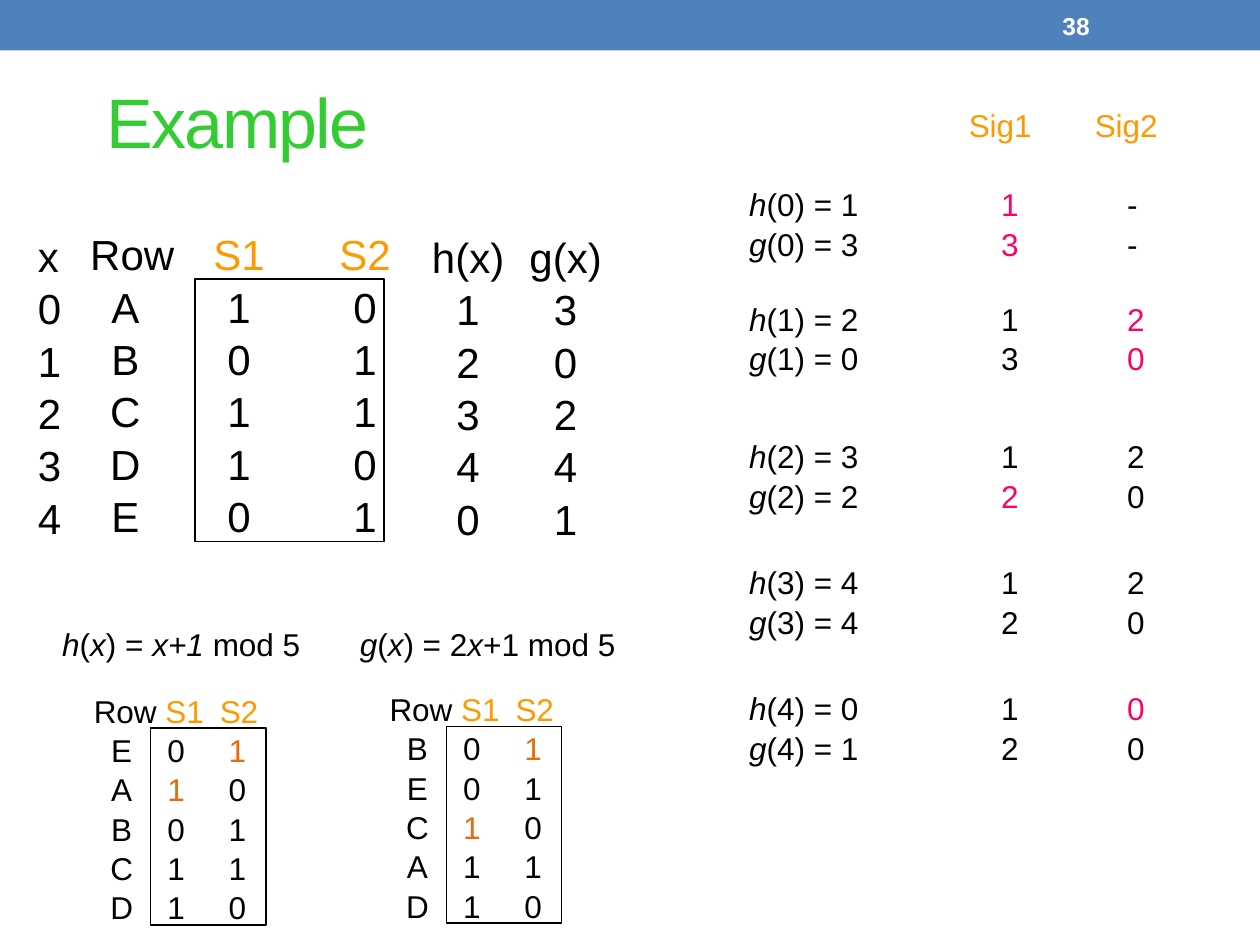
import pptx
import pptx.dml.color
import pptx.enum.shapes
import pptx.enum.text
import pptx.oxml
import pptx.oxml.ns
import pptx.util

Pt = pptx.util.Pt
RGBColor = pptx.dml.color.RGBColor
ALIGN = pptx.enum.text.PP_ALIGN
ANCHOR = pptx.enum.text.MSO_ANCHOR

BLUE = RGBColor(0x4F, 0x81, 0xBD)
WHITE = RGBColor(0xFF, 0xFF, 0xFF)
BLACK = RGBColor(0, 0, 0)
GREEN = RGBColor(0x33, 0xCC, 0x33)
AMBER = RGBColor(0xFF, 0x99, 0x00)
ORANGE = RGBColor(0xE4, 0x6C, 0x0A)
PINK = RGBColor(0xFF, 0x00, 0x66)

BASE = {"name": "Arial", "size": Pt(18), "color": BLACK}
LARGE = {"size": Pt(24)}
ITALIC = {"italic": True}

H_VALUES = ["1", "2", "3", "4", "0"]
G_VALUES = ["3", "0", "2", "4", "1"]
ROWS = ["A10", "B01", "C11", "D10", "E01"]
H_ORDER = ["E01*", "A1*0", "B01", "C11", "D10"]
G_ORDER = ["B01*", "E01", "C1*0", "A11", "D10"]
SIGNATURES = [
    (101.5, ("1*", "-"), ("3*", "-")),
    (167, ("1", "2*"), ("3", "0*")),
    (245.5, ("1", "2"), ("2*", "0")),
    (317.5, ("1", "2"), ("2", "0")),
    (389.5, ("1", "0*"), ("2", "0")),
]
LARGE_GRID = {
    "style": LARGE, "size": (189, 181), "frame": (67, 33.5, 108, 150),
    "header_stops": (85, 157), "row_stops": (20, 85, 157),
}
SMALL_GRID = {
    "style": {}, "size": (109, 160), "frame": (39.5, 25, 66, 112.5),
    "header_stops": (52, 83), "row_stops": (16, 47, 82),
}


def format_font(font, values):
    """Apply a dict of format values to a font."""
    for attribute, value in values.items():
        if attribute == "color":
            font.color.rgb = value
        else:
            setattr(font, attribute, value)


def set_tabs(paragraph, stops, kind):
    """Give a paragraph its tab stops in points."""
    properties = paragraph._p.get_or_add_pPr()
    tabs = pptx.oxml.parse_xml(f"<a:tabLst {pptx.oxml.ns.nsdecls('a')}/>")
    for stop in stops:
        tab = tabs.makeelement(pptx.oxml.ns.qn("a:tab"), {"pos": str(Pt(stop)), "algn": kind})
        tabs.append(tab)
    properties.append(tabs)


def add_lines(slide, box, lines, style=None, align=ALIGN.LEFT, anchor=ANCHOR.TOP,
              spacing=1.04, stops=None, kind="l"):
    """Place lines of (text, format) runs in a box and return the text frame."""
    frame = slide.shapes.add_textbox(*map(Pt, box)).text_frame
    frame.word_wrap = True
    frame.vertical_anchor = anchor
    for index, runs in enumerate(lines):
        line = frame.paragraphs[0] if index == 0 else frame.add_paragraph()
        line.alignment = align
        line.line_spacing = spacing
        if stops:
            set_tabs(line, stops[min(index, len(stops) - 1)], kind)
        for text, values in runs:
            run = line.add_run()
            run.text = text
            format_font(run.font, {**BASE, **(style or {}), **values})
    return frame


def add_rectangle(slide, box, fill=None, border=None):
    """Draw a plain rectangle with an optional fill or border."""
    rectangle = slide.shapes.add_shape(
        pptx.enum.shapes.MSO_SHAPE.RECTANGLE, *map(Pt, box))
    rectangle.shadow.inherit = False
    if fill is None:
        rectangle.fill.background()
    else:
        rectangle.fill.solid()
        rectangle.fill.fore_color.rgb = fill
    if border is None:
        rectangle.line.fill.background()
    else:
        rectangle.line.color.rgb = border
        rectangle.line.width = Pt(0.75)


def marked(value, accent):
    """Return the run of a value, in the accent colour if it ends in a star."""
    return value.rstrip("*"), {"color": accent} if value.endswith("*") else {}


def build_banner(slide, left, top, width, height):
    """Build the top bar with the page number."""
    add_rectangle(slide, (left, top, width, height), fill=BLUE)
    add_lines(slide, (left + 600, top + 1.5, 84, 26),
              [[("38", {"size": Pt(14), "bold": True, "color": WHITE})]],
              anchor=ANCHOR.MIDDLE, spacing=1)


def build_title(slide, left, top, width, height):
    """Build the heading with tightened letters."""
    frame = add_lines(slide, (left, top, width, height),
                      [[("Example", {"size": Pt(40), "color": GREEN})]],
                      anchor=ANCHOR.MIDDLE, spacing=1)
    frame.paragraphs[0].runs[0].font._element.set("spc", "-100")


def build_grid(slide, left, top, rows, grid):
    """Build a framed matrix of rows against the sets S1 and S2."""
    lines = [[("Row\t", {}), ("S1\tS2", {"color": AMBER})]]
    for name, *cells in rows:
        values = "".join(cells).replace("0", " 0").replace("1", " 1").split()
        runs = [("\t" + name, {})]
        for value in values:
            runs += [("\t", {}), marked(value, ORANGE)]
        lines.append(runs)
    add_lines(slide, (left, top, *grid["size"]), lines, grid["style"],
              stops=(grid["header_stops"], grid["row_stops"]), kind="ctr")
    x, y, width, height = grid["frame"]
    add_rectangle(slide, (left + x, top + y, width, height), border=BLACK)


def build_column(slide, left, top, width, height, entries, align):
    """Build one column of large values under its heading."""
    add_lines(slide, (left, top, width, height),
              [[(entry, {})] for entry in entries], LARGE, align)


def build_formula(slide, left, top, width, height, parts):
    """Build a hash formula whose parts alternate italic and upright."""
    runs = [(part, {} if index % 2 else ITALIC) for index, part in enumerate(parts)]
    add_lines(slide, (left, top, width, height), [runs], spacing=1)


def build_signatures(slide, left, top, width, height):
    """Build the signature headings and the steps for each x."""
    add_lines(slide, (left + 125.5, top, 132, 36),
              [[("Sig1\tSig2", {"color": AMBER})]], spacing=1, stops=[(72,)])
    for x, (offset, h_signature, g_signature) in enumerate(SIGNATURES):
        lines = []
        for name, results, signature in (("h", H_VALUES, h_signature),
                                         ("g", G_VALUES, g_signature)):
            runs = [(name, ITALIC), (f"({x}) = {results[x]}", {})]
            for value in signature:
                runs += [("\t", {}), marked(value, PINK)]
            lines.append(runs)
        add_lines(slide, (left, offset, width, height), lines, stops=[(144, 216)])


def main():
    """Build the slide and save it."""
    deck = pptx.Presentation()
    deck.slide_width, deck.slide_height = Pt(720), Pt(540)
    slide = deck.slides.add_slide(deck.slide_layouts[6])
    build_banner(slide, 0, 0, 720, 28.8)
    build_title(slide, 54, 24, 282, 90)
    build_grid(slide, 44.5, 126, ROWS, LARGE_GRID)
    build_column(slide, 14.5, 127, 28, 181, ["x", *"01234"], ALIGN.LEFT)
    build_column(slide, 237.5, 127.5, 60, 181, ["h(x)", *H_VALUES], ALIGN.CENTER)
    build_column(slide, 293, 127.5, 60.5, 181, ["g(x)", *G_VALUES], ALIGN.CENTER)
    build_formula(slide, 28.5, 353.5, 160, 29, ["h", "(", "x", ") = ", "x+1 ", "mod 5"])
    build_formula(slide, 198.5, 353.5, 170, 29, ["g", "(", "x", ") = 2", "x", "+1 mod 5"])
    build_grid(slide, 46.5, 391, H_ORDER, SMALL_GRID)
    build_grid(slide, 215.5, 390, G_ORDER, SMALL_GRID)
    build_signatures(slide, 421, 57, 243, 51)
    deck.save("out.pptx")


if __name__ == "__main__":
    main()
